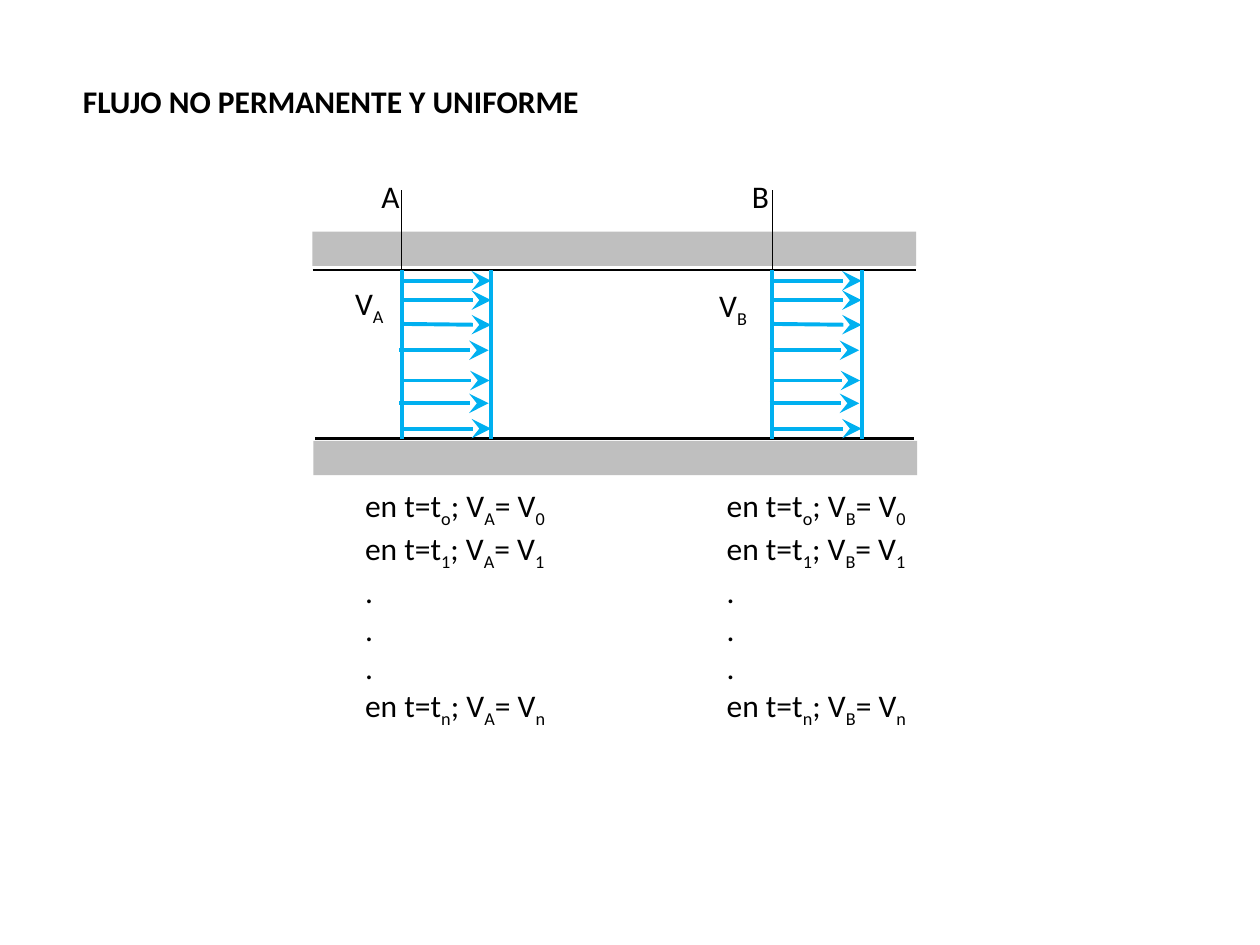
from dataclasses import dataclass

from lxml.etree import SubElement
from pptx import Presentation
from pptx.dml.color import RGBColor
from pptx.enum.shapes import MSO_CONNECTOR as Connector, MSO_SHAPE as Shape
from pptx.enum.text import MSO_AUTO_SIZE as AutoSize, PP_ALIGN as Align
from pptx.oxml.ns import qn
from pptx.util import Cm, Pt


@dataclass(frozen=True)
class Theme:
    font: str = "Calibri"
    text_size: float = 18
    ink: str = "000000"
    wall: str = "BFBFBF"
    flow: str = "00B0F0"
    thin: float = 0.75
    medium: float = 1.5
    thick: float = 2.25
    subscript: str = "-25000"


class Sketch:
    def __init__(self, page, theme):
        self.page = page
        self.theme = theme

    def line(self, x1, y1, x2, y2, color, weight, arrow=False):
        line = self.page.shapes.add_connector(
            Connector.STRAIGHT, Cm(x1), Cm(y1), Cm(x2), Cm(y2))
        line.line.color.rgb = RGBColor.from_string(color)
        line.line.width = Pt(weight)
        if arrow:
            SubElement(line.line._get_or_add_ln(), qn("a:tailEnd"),
                       type="stealth", w="lg", len="lg")
        SubElement(line._element.spPr, qn("a:effectLst"))

    def block(self, left, top, width, height, color):
        block = self.page.shapes.add_shape(
            Shape.RECTANGLE, Cm(left), Cm(top), Cm(width), Cm(height))
        block.shadow.inherit = False
        block.fill.solid()
        block.fill.fore_color.rgb = RGBColor.from_string(color)
        block.line.fill.background()

    def text(self, left, top, width, height, rows, align=Align.LEFT, bold=False):
        """Write one paragraph per row; the character after "_" is a subscript."""
        box = self.page.shapes.add_textbox(Cm(left), Cm(top), Cm(width), Cm(height))
        frame = box.text_frame
        frame.word_wrap = False
        frame.auto_size = AutoSize.SHAPE_TO_FIT_TEXT
        for index, row in enumerate(rows):
            para = frame.add_paragraph() if index else frame.paragraphs[0]
            para.alignment = align
            first, *others = row.split("_")
            self.span(para, first, bold)
            for part in others:
                self.span(para, part[0], bold, subscript=True)
                if part[1:]:
                    self.span(para, part[1:], bold)

    def span(self, para, text, bold, subscript=False):
        span = para.add_run()
        span.text = text
        span.font.name = self.theme.font
        span.font.size = Pt(self.theme.text_size)
        span.font.bold = bold
        span.font.color.rgb = RGBColor.from_string(self.theme.ink)
        if subscript:
            span._r.get_or_add_rPr().set("baseline", self.theme.subscript)


PIPE_TOP, PIPE_BOTTOM = 5.44, 8.84
PROFILE_WIDTH = 1.8
# Velocity arrows: shift from the section line, height, drop along the arrow
ARROWS = [(0, 5.66, 0), (0, 6.05, 0), (0, 6.53, 0.02), (-0.05, 7.06, 0),
          (-0.03, 7.67, 0), (-0.05, 8.13, 0), (0, 8.64, 0)]
# Sections: name, section line x, velocity label (x, y), equations x
SECTIONS = [("A", 8.1, (6.91, 5.61), 7.11),
            ("B", 15.57, (14.25, 5.64), 14.4)]


def draw_section(sketch, name, x, velocity_at, equations_x):
    theme = sketch.theme
    # Velocity profile
    for edge in (x, x + PROFILE_WIDTH):
        sketch.line(edge, PIPE_TOP, edge, PIPE_BOTTOM, theme.flow, theme.thick)
    for shift, y, drop in ARROWS:
        start = x + shift
        sketch.line(start, y, start + PROFILE_WIDTH, y + drop,
                    theme.flow, theme.thick, arrow=True)
    # Section mark and labels
    sketch.line(x, PIPE_TOP, x, 3.84, theme.ink, theme.thin)
    sketch.text(x - 0.66, 3.45, 0.88, 1.02, [name])
    sketch.text(*velocity_at, 1.1, 1.02, [f"V_{name}"])
    # Velocity over time
    first, second, last = (f"en t=t_{time}; V_{name}= V_{speed}"
                           for time, speed in ("o0", "11", "nn"))
    sketch.text(equations_x, 9.68, 4.32, 5.64,
                [first, second, ".", ".", ".", last])


def main():
    deck = Presentation()
    deck.slide_width, deck.slide_height = Cm(25.4), Cm(19.05)
    theme = Theme()
    sketch = Sketch(deck.slides.add_slide(deck.slide_layouts[6]), theme)

    # Title
    sketch.text(1.3, 1.52, 10.62, 1.02, ["FLUJO NO PERMANENTE Y UNIFORME"],
                align=Align.RIGHT, bold=True)

    # Pipe walls
    sketch.line(6.3, PIPE_TOP, 18.47, PIPE_TOP, theme.ink, theme.medium)
    sketch.line(6.35, PIPE_BOTTOM, 18.42, PIPE_BOTTOM, theme.ink, theme.medium)
    for left, top in ((6.3, 4.67), (6.32, 8.89)):
        sketch.block(left, top, 12.17, 0.69, theme.wall)

    # Sections A and B
    for section in SECTIONS:
        draw_section(sketch, *section)

    deck.save("out.pptx")


if __name__ == "__main__":
    main()
